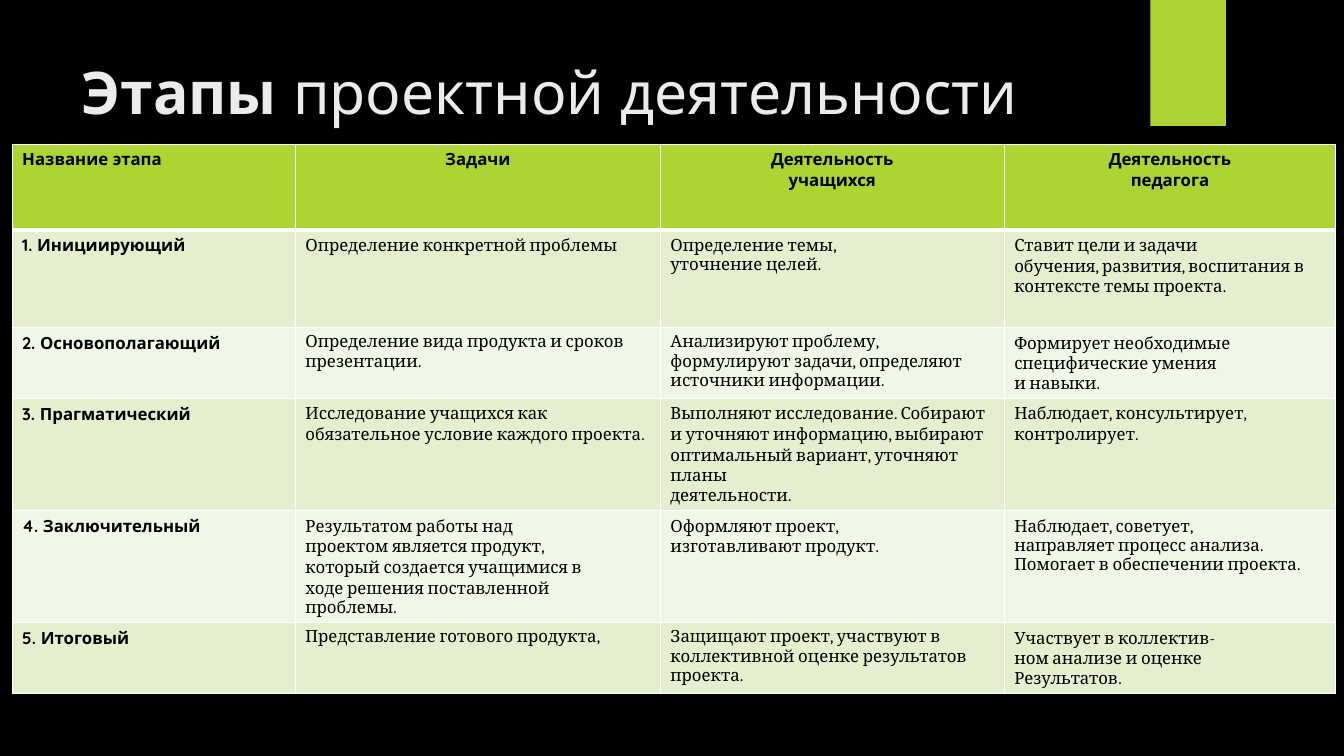
import pptx
import pptx.dml.color
import pptx.enum.shapes
import pptx.enum.text
import pptx.oxml
import pptx.oxml.ns
import pptx.util
from pptx.util import Inches

HEADING_FONT = "Quicksand"
BODY_FONT = "Cambria"
LIME = "ACD433"
BAND_FILLS = ("E3EFCE", "F1F7E8")
LOOSE_SPACING = 1.07
COLUMN_WIDTHS = (2.81, 3.62, 3.41, 3.29)
ROW_HEIGHTS = (0.85, 0.97, 0.7, 1.11, 1.11, 0.7)

HEADERS = (
    ["Название этапа"],
    ["Задачи"],
    ["Деятельность", "учащихся"],
    ["Деятельность", "педагога"],
)

# Each body cell holds its loosely spaced paragraphs, then its single-spaced ones.
STAGES = (
    ("1. Инициирующий",
     (["Определение конкретной проблемы"], []),
     (["Определение темы,"], ["уточнение целей."]),
     (["Ставит цели и задачи",
       "обучения, развития, воспитания в контексте темы проекта."], [])),
    ("2. Основополагающий",
     ([], ["Определение вида продукта и сроков презентации."]),
     ([], ["Анализируют проблему, формулируют задачи, определяют "
           "источники информации."]),
     (["Формирует необходимые", "специфические умения"], ["и навыки."])),
    ("3. Прагматический",
     (["Исследование учащихся как обязательное условие каждого проекта."], []),
     (["Выполняют исследование. Собирают и уточняют информацию, выбирают "
       "оптимальный вариант, уточняют планы"], ["деятельности."]),
     (["Наблюдает, консультирует, контролирует."], [])),
    ("4. Заключительный",
     (["Результатом работы над", "проектом является продукт,",
       "который создается учащимися в", "ходе решения поставленной"],
      ["проблемы."]),
     (["Оформляют проект,", "изготавливают продукт."], []),
     (["Наблюдает, советует,"],
      ["направляет процесс анализа. Помогает в обеспечении проекта."])),
    ("5. Итоговый",
     ([], ["Представление готового продукта,"]),
     ([], ["Защищают проект, участвуют в коллективной оценке результатов "
           "проекта."]),
     (["Участвует в коллектив-", "ном анализе и оценке"], ["Результатов."])),
)


def color(value):
    return pptx.dml.color.RGBColor.from_string(value)


def paint(fill, value):
    fill.solid()
    fill.fore_color.rgb = color(value)


def add_span(para, text, font, size, value, bold=False):
    span = para.add_run()
    span.text = text
    span.font.name = font
    span.font.size = pptx.util.Pt(size)
    span.font.bold = bold
    span.font.color.rgb = color(value)


def add_accent(page):
    accent = page.shapes.add_shape(
        pptx.enum.shapes.MSO_SHAPE.RECTANGLE,
        Inches(11.41), Inches(0), Inches(0.75), Inches(1.25))
    accent.shadow.inherit = False
    paint(accent.fill, LIME)
    accent.line.fill.background()


def set_title(page):
    title = page.shapes.title
    title.left, title.top = Inches(0.71), Inches(0.5)
    title.width, title.height = Inches(10.29), Inches(1.53)
    title.text_frame.word_wrap = True
    title.text_frame.vertical_anchor = pptx.enum.text.MSO_ANCHOR.TOP
    para = title.text_frame.paragraphs[0]
    para.alignment = pptx.enum.text.PP_ALIGN.LEFT
    add_span(para, "Этапы", HEADING_FONT, 42, "EBEBEB", True)
    add_span(para, " проектной деятельности", HEADING_FONT, 42, "EBEBEB")


def set_borders(cell, top, bottom):
    properties = cell._tc.get_or_add_tcPr()
    for side, points in (("L", 1), ("R", 1), ("T", top), ("B", bottom)):
        properties.append(pptx.oxml.parse_xml(
            f'<a:ln{side} {pptx.oxml.ns.nsdecls("a")} w="{pptx.util.Pt(points)}">'
            '<a:solidFill><a:srgbClr val="FFFFFF"/></a:solidFill>'
            f'</a:ln{side}>'))


def fill_cell(cell, loose, tight, font, bold, centered=False):
    frame = cell.text_frame
    spacings = [LOOSE_SPACING] * len(loose) + [1.0] * len(tight)
    for index, (text, spacing) in enumerate(zip(loose + tight, spacings)):
        para = frame.add_paragraph() if index else frame.paragraphs[0]
        para.line_spacing = spacing
        if centered:
            para.alignment = pptx.enum.text.PP_ALIGN.CENTER
        add_span(para, text, font, 12, "000000", bold)


def add_stage_table(page):
    table = page.shapes.add_table(
        len(ROW_HEIGHTS), len(COLUMN_WIDTHS), Inches(0.12), Inches(1.43),
        Inches(sum(COLUMN_WIDTHS)), Inches(sum(ROW_HEIGHTS))).table
    for column, width in zip(table.columns, COLUMN_WIDTHS):
        column.width = Inches(width)
    for row, height in zip(table.rows, ROW_HEIGHTS):
        row.height = Inches(height)

    for index, lines in enumerate(HEADERS):
        cell = table.cell(0, index)
        set_borders(cell, 1, 3)
        paint(cell.fill, LIME)
        fill_cell(cell, [], lines, HEADING_FONT, True, index > 0)

    for number, (name, *details) in enumerate(STAGES, 1):
        for index, cell in enumerate(table.rows[number].cells):
            set_borders(cell, 3 if number == 1 else 1, 1)
            paint(cell.fill, BAND_FILLS[(number - 1) % 2])
            if index == 0:
                fill_cell(cell, [], [name], HEADING_FONT, True)
            else:
                fill_cell(cell, *details[index - 1], BODY_FONT, False)


def main():
    deck = pptx.Presentation()
    deck.slide_width, deck.slide_height = Inches(13.33), Inches(7.5)
    page = deck.slides.add_slide(deck.slide_layouts[5])
    paint(page.background.fill, "000000")
    add_accent(page)
    set_title(page)
    add_stage_table(page)
    deck.save("out.pptx")


if __name__ == "__main__":
    main()
